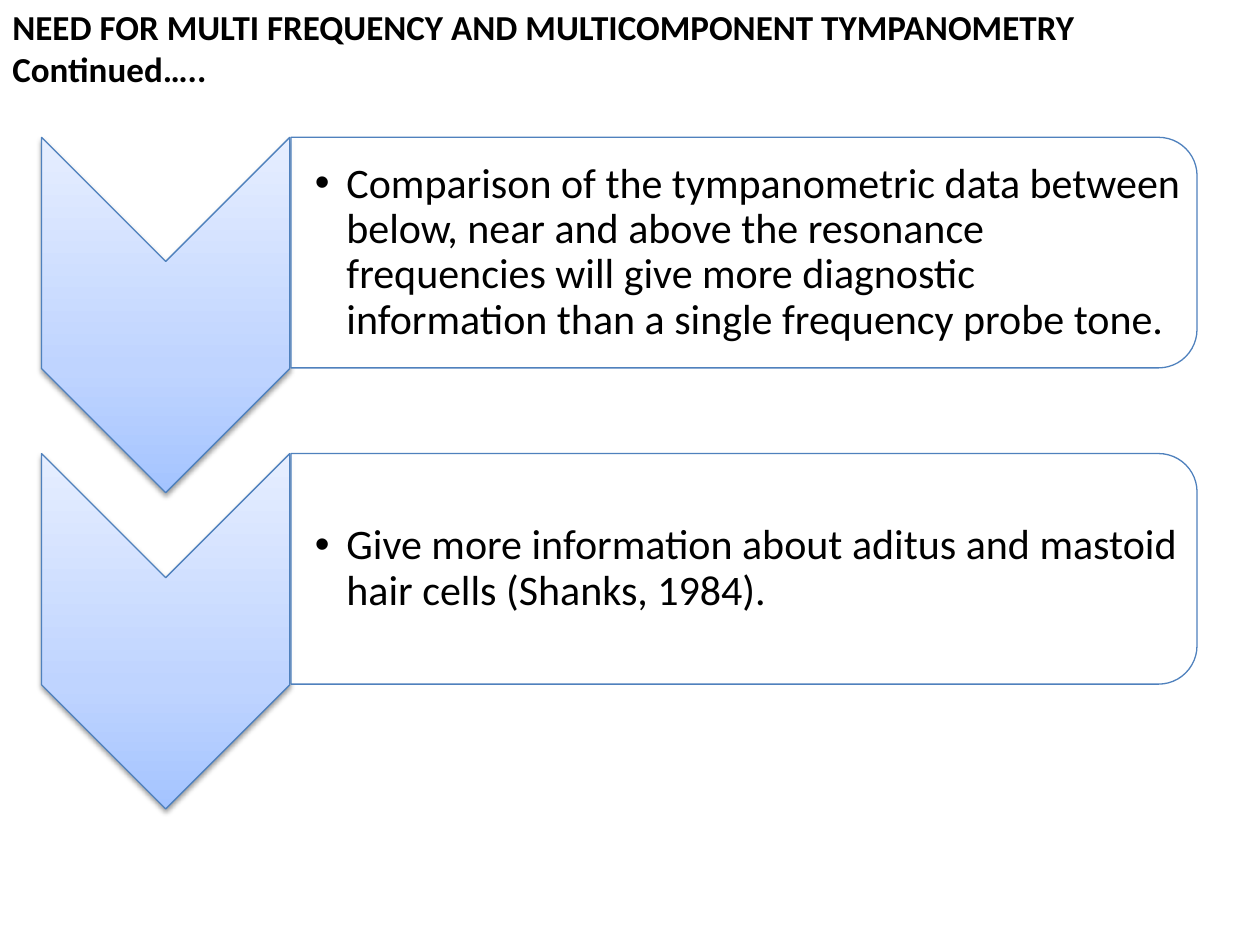
from pptx import Presentation
from pptx.dml.color import RGBColor
from pptx.enum.shapes import MSO_SHAPE as Shape
from pptx.enum.text import MSO_ANCHOR as Anchor
from pptx.oxml import parse_xml
from pptx.oxml.ns import nsdecls, qn
from pptx.util import Inches, Pt

COLORS = {
    "black": "000000",
    "white": "FFFFFF",
    "outline": "4F81BD",
    "deep": "A4C4FF",
    "middle": "BFD4FF",
    "pale": "E6EEFF",
}
FONT = "Calibri"
TITLE = ["NEED FOR MULTI FREQUENCY AND MULTICOMPONENT TYMPANOMETRY", "Continued….."]
POINTS = [
    "Comparison of the tympanometric data between below, near and above the resonance "
    "frequencies will give more diagnostic information than a single frequency probe tone.",
    "Give more information about aditus and mastoid hair cells (Shanks, 1984).",
]
FIRST_TOP, STEP = 1.09, 2.51
CHEVRON_LEFT, CHEVRON_WIDTH, CHEVRON_HEIGHT = 0.33, 1.97, 2.82
PANEL_LEFT, PANEL_WIDTH, PANEL_HEIGHT = 2.31, 7.19, 1.83


def rgb(name):
    return RGBColor.from_string(COLORS[name])


def add_turned_shape(page, kind, left, top, width, height):
    """Add an outlined shape turned a quarter clockwise, given the area it covers."""
    offset = (width - height) / 2
    shape = page.shapes.add_shape(
        kind, Inches(left + offset), Inches(top - offset), Inches(height), Inches(width)
    )
    shape.rotation = 90
    shape.shadow.inherit = False
    shape.line.color.rgb = rgb("outline")
    shape.line.width = Pt(0.75)
    return shape


def add_chevron(page, top):
    chevron = add_turned_shape(
        page, Shape.CHEVRON, CHEVRON_LEFT, top, CHEVRON_WIDTH, CHEVRON_HEIGHT
    )
    stops = "".join(
        f'<a:gs pos="{percent * 1000}"><a:srgbClr val="{COLORS[name]}"/></a:gs>'
        for percent, name in [(0, "deep"), (35, "middle"), (100, "pale")]
    )
    gradient = parse_xml(
        f'<a:gradFill {nsdecls("a")} rotWithShape="0"><a:gsLst>{stops}</a:gsLst>'
        '<a:lin ang="16200000" scaled="0"/></a:gradFill>'
    )
    properties = chevron._element.spPr
    properties.find(qn("a:prstGeom")).addnext(gradient)
    shadow = parse_xml(
        f'<a:outerShdw {nsdecls("a")} blurRad="{Pt(3.1)}" dist="{Pt(1.6)}" dir="5400000" '
        f'rotWithShape="0"><a:srgbClr val="{COLORS["black"]}"><a:alpha val="38000"/>'
        "</a:srgbClr></a:outerShdw>"
    )
    properties.find(qn("a:effectLst")).append(shadow)


def add_panel(page, top):
    panel = add_turned_shape(
        page, Shape.ROUND_2_SAME_RECTANGLE, PANEL_LEFT, top, PANEL_WIDTH, PANEL_HEIGHT
    )
    panel.fill.solid()
    panel.fill.fore_color.rgb = rgb("white")
    color = panel._element.spPr.find(qn("a:solidFill"))[0]
    color.append(parse_xml(f'<a:alpha {nsdecls("a")} val="90000"/>'))


def add_text_box(page, left, top, width, height):
    box = page.shapes.add_textbox(Inches(left), Inches(top), Inches(width), Inches(height))
    box.text_frame.word_wrap = True
    box.text_frame.vertical_anchor = Anchor.MIDDLE
    return box.text_frame


def add_span(para, text, size, bold=False):
    span = para.add_run()
    span.text = text
    span.font.name = FONT
    span.font.size = Pt(size)
    span.font.bold = bold
    span.font.color.rgb = rgb("black")


def add_title(page):
    para = add_text_box(page, 0, -0.25, 9, 1.25).paragraphs[0]
    add_span(para, TITLE[0], 20, True)
    para.add_line_break()
    add_span(para, TITLE[1], 20, True)


def add_point(page, text, top):
    frame = add_text_box(page, PANEL_LEFT, top + 0.09, 7.1, 1.65)
    frame.margin_left = Inches(0.19)
    frame.margin_top = frame.margin_right = frame.margin_bottom = Inches(0.02)
    para = frame.paragraphs[0]
    settings = para._p.get_or_add_pPr()
    settings.set("marL", str(Inches(0.25)))
    settings.set("indent", str(-Inches(0.25)))
    settings.append(parse_xml(f'<a:buFont {nsdecls("a")} typeface="Arial"/>'))
    settings.append(parse_xml(f'<a:buChar {nsdecls("a")} char="•"/>'))
    para.line_spacing = 0.9
    add_span(para, text, 24)


def main():
    deck = Presentation()
    deck.slide_width, deck.slide_height = Inches(10), Inches(7.5)
    page = deck.slides.add_slide(deck.slide_layouts[6])
    add_title(page)
    for index, text in enumerate(POINTS):
        top = FIRST_TOP + index * STEP
        add_chevron(page, top)
        add_panel(page, top)
        add_point(page, text, top)
    deck.save("out.pptx")


if __name__ == "__main__":
    main()
